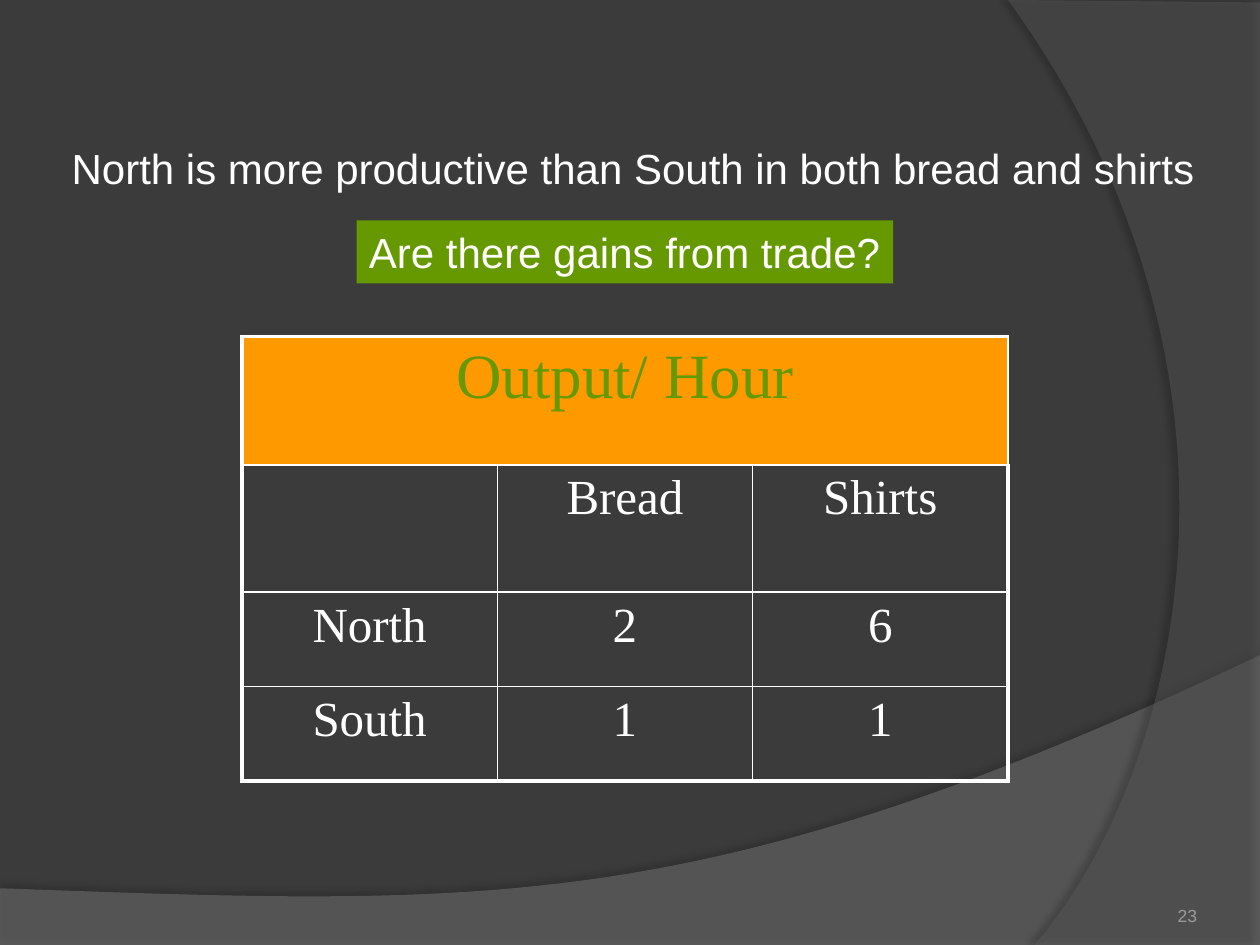
from lxml import etree
from pptx import Presentation
from pptx.dml.color import RGBColor
from pptx.enum import shapes, text
from pptx.oxml import parse_xml
from pptx.oxml.ns import nsdecls, qn
from pptx.util import Inches, Pt

DARK = RGBColor(0x3B, 0x3B, 0x3B)
GREY = RGBColor(0x7F, 0x7F, 0x7F)
SLATE = RGBColor(0x5E, 0x5E, 0x5E)
WHITE = RGBColor(0xFF, 0xFF, 0xFF)
GREEN = RGBColor(0x66, 0x99, 0x00)
ORANGE = RGBColor(0xFF, 0x99, 0x00)
PALE = RGBColor(0x9D, 0x9B, 0x9A)
SANS, SERIF = "Arial", "Times New Roman"
ROWS = [
    ["Output/ Hour", "", ""],
    ["", "Bread", "Shirts"],
    ["North", "2", "6"],
    ["South", "1", "1"],
]


def style(para, size, face, color, align):
    para.alignment = align
    for run in para.runs:
        run.font.size = Pt(size)
        run.font.name = face
        run.font.color.rgb = color


def curve(start, c1, c2, end, steps=48):
    """Points along a cubic curve, both ends included."""
    pts = []
    for i in range(steps + 1):
        t = i / steps
        s = 1 - t
        mix = (s**3, 3 * s * s * t, 3 * s * t * t, t**3)
        pts.append(tuple(sum(m * p[k] for m, p in zip(mix, (start, c1, c2, end)))
                         for k in (0, 1)))
    return pts


def add_wave(slide, pts, color, alpha, shade, gap, angle):
    """Translucent backdrop shape; shade, gap and angle set its soft shadow."""
    pts = [(Inches(x), Inches(y)) for x, y in pts]
    pen = slide.shapes.build_freeform(*pts[0])
    pen.add_line_segments(pts[1:], close=True)
    wave = pen.convert_to_shape()
    wave.fill.solid()
    wave.fill.fore_color.rgb = color
    wave.line.fill.background()
    tint = wave.element.spPr.find(qn("a:solidFill"))[0]
    etree.SubElement(tint, qn("a:alpha")).set("val", str(alpha * 1000))
    wave.element.spPr.append(parse_xml(
        f'<a:effectLst {nsdecls("a")}><a:outerShdw blurRad="{Pt(4)}" dist="{Pt(gap)}" '
        f'dir="{angle * 60000}" algn="ctr" rotWithShape="0"><a:srgbClr val="000000">'
        f'<a:alpha val="{shade * 1000}"/></a:srgbClr></a:outerShdw></a:effectLst>'))


def add_backdrop(slide):
    slide.background.fill.solid()
    slide.background.fill.fore_color.rgb = DARK
    low = curve((10, 5.2), (5.59, 7.29), (3.91, 7.19), (0, 7.05))
    add_wave(slide, low + [(0, 7.51), (10, 7.51)], GREY, 45, 35, 3.5, 270)
    side = curve((8.21, 7.5), (9.35, 6.19), (10.18, 3), (8, 0))
    add_wave(slide, side + [(10, 0.02), (10, 7.5)], SLATE, 40, 45, 4, 180)


def add_line(slide, box, words, fill=None):
    """One unwrapped line of text, on a filled bar if a fill is given."""
    place = [Inches(n) for n in box]
    if fill is None:
        shape = slide.shapes.add_textbox(*place)
    else:
        shape = slide.shapes.add_shape(shapes.MSO_SHAPE.RECTANGLE, *place)
        shape.shadow.inherit = False
        shape.fill.solid()
        shape.fill.fore_color.rgb = fill
        shape.line.fill.background()
    frame = shape.text_frame
    frame.text = words
    frame.word_wrap = False
    frame.auto_size = text.MSO_AUTO_SIZE.SHAPE_TO_FIT_TEXT
    frame.vertical_anchor = text.MSO_ANCHOR.TOP
    style(frame.paragraphs[0], 24, SANS, WHITE, text.PP_ALIGN.LEFT)


def add_edges(cell, widths):
    for side, width in zip("LRTB", widths):
        cell._tc.get_or_add_tcPr().append(parse_xml(
            f'<a:ln{side} {nsdecls("a")} w="{Pt(width)}"><a:solidFill>'
            f'<a:srgbClr val="{WHITE}"/></a:solidFill></a:ln{side}>'))


def add_output(slide, box):
    """Table of output per hour: thick outer frame, thin inner rules."""
    left, top, width, height = [Inches(n) for n in box]
    rows, cols = len(ROWS), len(ROWS[0])
    table = slide.shapes.add_table(rows, cols, left, top, width, height).table
    table.first_row = table.horz_banding = False
    for col in table.columns:
        col.width = width // cols
    for row, tall in zip(table.rows, (1.02, 1.01, 0.75, 0.75)):
        row.height = Inches(tall)
    table.cell(0, 0).merge(table.cell(0, cols - 1))
    for r, row in enumerate(ROWS):
        for c, words in enumerate(row):
            cell = table.cell(r, c)
            outer = (c == 0, c == cols - 1, r == 0, r == rows - 1)
            add_edges(cell, [2.25 if edge else 1 for edge in outer])
            if r == 0:
                cell.fill.solid()
                cell.fill.fore_color.rgb = ORANGE
            else:
                cell.fill.background()
            cell.text_frame.text = words
            size, color = (36, GREEN) if r == 0 else (28, WHITE)
            style(cell.text_frame.paragraphs[0], size, SERIF, color, text.PP_ALIGN.CENTER)


def add_number(slide, box, words):
    frame = slide.shapes.add_textbox(*[Inches(n) for n in box]).text_frame
    frame.text = words
    frame.word_wrap = True
    frame.vertical_anchor = text.MSO_ANCHOR.BOTTOM
    frame.margin_left = frame.margin_right = frame.margin_top = frame.margin_bottom = 0
    style(frame.paragraphs[0], 10, SANS, PALE, text.PP_ALIGN.RIGHT)


def main():
    deck = Presentation()
    deck.slide_width, deck.slide_height = Inches(10), Inches(7.5)
    slide = deck.slides.add_slide(deck.slide_layouts[6])
    add_backdrop(slide)
    add_output(slide, (1.92, 2.67, 6.08, 3.53))
    add_line(slide, (0.47, 1.08, 9.12, 0.5),
             "North is more productive than South in both bread and shirts")
    add_line(slide, (2.83, 1.75, 4.26, 0.5), "Are there gains from trade?", GREEN)
    add_number(slide, (7.17, 6.83, 2.33, 0.52), "23")
    deck.save("out.pptx")


if __name__ == "__main__":
    main()
